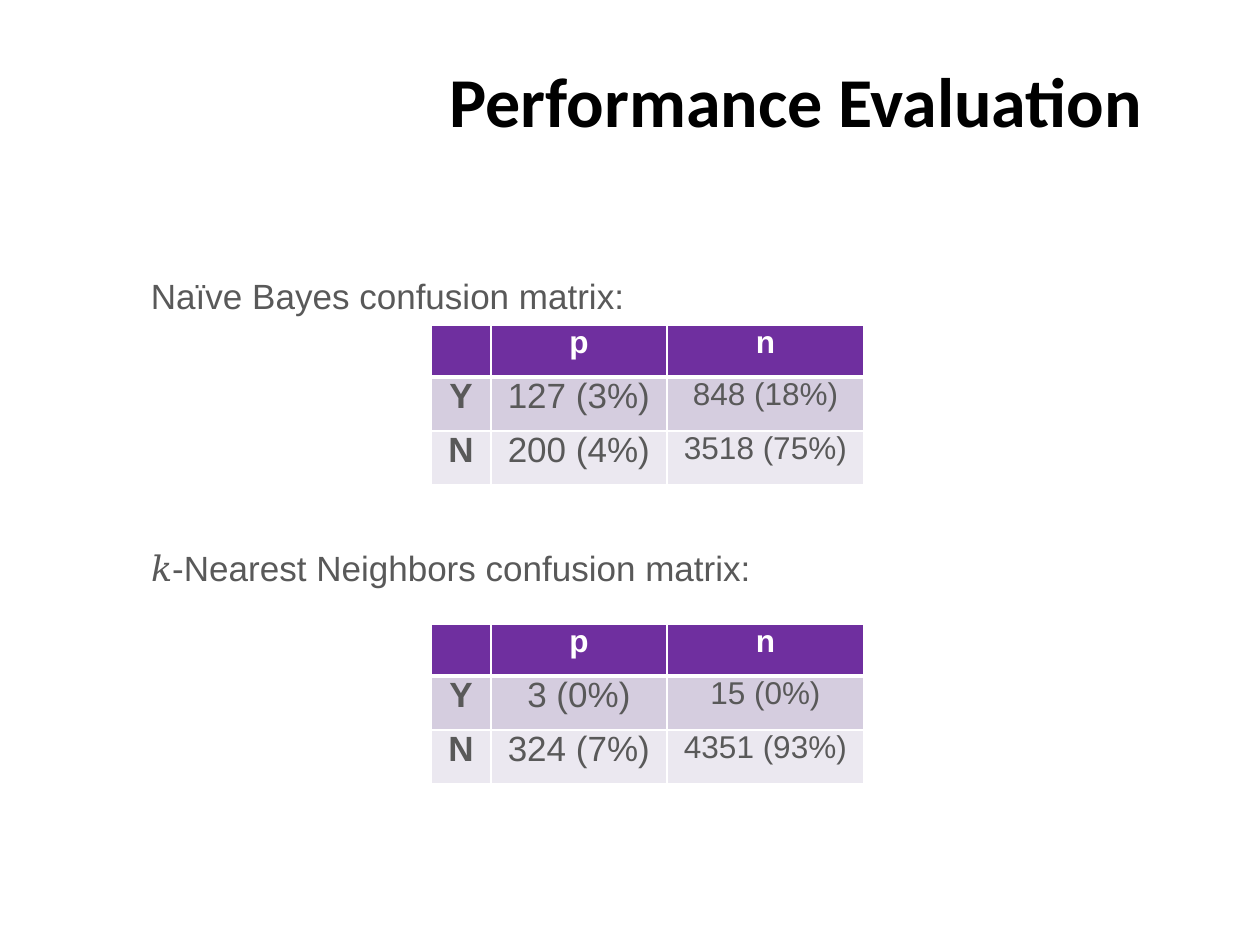
from pptx import Presentation
from pptx.dml.color import RGBColor
from pptx.enum.text import MSO_ANCHOR, PP_ALIGN
from pptx.oxml.ns import qn
from pptx.util import Pt
from lxml import etree

PX = 914400 / 126
LEFT, CENTER, RIGHT = PP_ALIGN.LEFT, PP_ALIGN.CENTER, PP_ALIGN.RIGHT
TOP, MIDDLE = MSO_ANCHOR.TOP, MSO_ANCHOR.MIDDLE
WHITE, BLACK, GRAY = "FFFFFF", "000000", "595959"
ROW_FILLS = ["6F2F9F", "D5CDDF", "EBE8F0"]
COL_WIDTHS = [60, 176, 197]
ROW_HEIGHTS = [52, 54, 54]


def px(n):
    return round(n * PX)


def rgb(value):
    return RGBColor.from_string(value)


def add_run(p, text, size=20, font="Arial", color=GRAY, bold=False):
    r = p.add_run()
    r.text = text
    r.font.size = Pt(size)
    r.font.name = font
    r.font.bold = bold
    r.font.color.rgb = rgb(color)
    return r


def add_box(s, box, align=LEFT, anchor=TOP, wrap=False):
    tf = s.shapes.add_textbox(*map(px, box)).text_frame
    tf.margin_left = tf.margin_right = tf.margin_top = tf.margin_bottom = 0
    tf.word_wrap = wrap
    tf.vertical_anchor = anchor
    p = tf.paragraphs[0]
    p.alignment = align
    return p


def add_title(s, box, text):
    p = add_box(s, box, align=RIGHT, anchor=MIDDLE, wrap=True)
    add_run(p, text, size=40, font="Calibri", color=BLACK, bold=True)


def add_caption(s, box, text, symbol=""):
    p = add_box(s, box)
    if symbol:
        add_run(p, symbol, font="Cambria")
    add_run(p, text)


def set_borders(cell, top, bottom):
    tcPr = cell._tc.get_or_add_tcPr()
    widths = {"a:lnL": 1, "a:lnR": 1, "a:lnT": top, "a:lnB": bottom}
    for i, (tag, width) in enumerate(widths.items()):
        ln = etree.Element(qn(tag), w=str(Pt(width)))
        fill = etree.SubElement(ln, qn("a:solidFill"))
        etree.SubElement(fill, qn("a:srgbClr"), val=WHITE)
        tcPr.insert(i, ln)


def add_matrix(s, left, top, rows):
    box = (left, top, sum(COL_WIDTHS), sum(ROW_HEIGHTS))
    table = s.shapes.add_table(len(rows), len(COL_WIDTHS), *map(px, box)).table
    table.horz_banding = False
    for col, width in zip(table.columns, COL_WIDTHS):
        col.width = px(width)
    for i, (height, values) in enumerate(zip(ROW_HEIGHTS, rows)):
        table.rows[i].height = px(height)
        for j, text in enumerate(values):
            cell = table.cell(i, j)
            cell.margin_left = cell.margin_right = 0
            cell.margin_top = cell.margin_bottom = 0
            cell.fill.solid()
            cell.fill.fore_color.rgb = rgb(ROW_FILLS[i])
            set_borders(cell, top=3 if i == 1 else 1, bottom=3 if i == 0 else 1)
            p = cell.text_frame.paragraphs[0]
            p.alignment = CENTER
            if text:
                add_run(p, text, size=18 if i == 0 or j == 2 else 20,
                        color=WHITE if i == 0 else GRAY, bold=i == 0 or j == 0)


def main():
    prs = Presentation()
    prs.slide_width, prs.slide_height = px(1260), px(945)
    s = prs.slides.add_slide(prs.slide_layouts[6])
    header = ["", "p", "n"]
    add_title(s, (296, 27, 846, 146), "Performance Evaluation")
    add_caption(s, (151, 275, 476, 39), "Naïve Bayes confusion matrix:")
    add_matrix(s, 431, 325, [header,
                             ["Y", "127 (3%)", "848 (18%)"],
                             ["N", "200 (4%)", "3518 (75%)"]])
    add_caption(s, (151, 547, 601, 40), "-Nearest Neighbors confusion matrix:", symbol="𝑘")
    add_matrix(s, 431, 624, [header,
                             ["Y", "3 (0%)", "15 (0%)"],
                             ["N", "324 (7%)", "4351 (93%)"]])
    prs.save("out.pptx")


if __name__ == "__main__":
    main()
